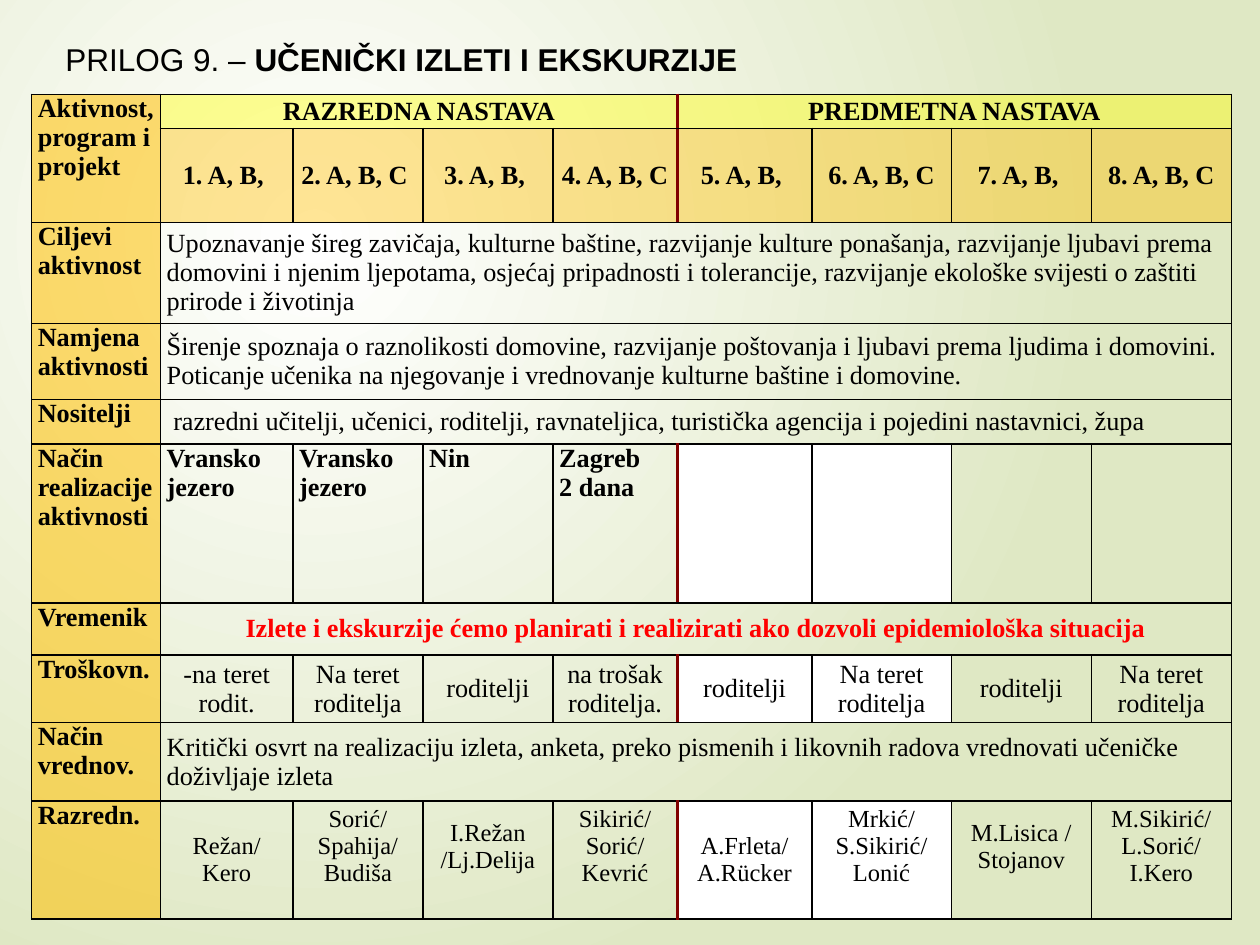
from lxml.etree import SubElement
from pptx import Presentation
from pptx.dml.color import RGBColor
from pptx.enum.text import MSO_ANCHOR as Anchor, MSO_AUTO_SIZE as AutoSize, PP_ALIGN as Align
from pptx.oxml.ns import qn
from pptx.util import Pt

BLACK, WHITE, RED, MAROON = "000000", "FFFFFF", "FF0000", "800000"
AMBER, YELLOW = "FFC000", "FFFF00"
LAST = 8
PRIMARY_LAST = 4
COLUMN_WIDTHS = [73.7, 75.7, 74.3, 74.3, 71.1, 76.9, 79.7, 80, 80]
ROW_HEIGHTS = [19.5, 53.8, 57.6, 43.6, 25.5, 90.8, 29.8, 38.4, 45, 67.4]

ROW_LABELS = {
    0: "Aktivnost, program i projekt",
    2: "Ciljevi aktivnost",
    3: "Namjena aktivnosti",
    4: "Nositelji",
    5: "Način realizacije aktivnosti",
    6: "Vremenik",
    7: "Troškovn.",
    8: "Način vrednov.",
    9: "Razredn.",
}
SHARED_TEXTS = {
    2: "Upoznavanje šireg zavičaja, kulturne baštine, razvijanje kulture ponašanja, "
       "razvijanje ljubavi prema domovini i njenim ljepotama, osjećaj pripadnosti i "
       "tolerancije, razvijanje ekološke svijesti o zaštiti prirode i životinja",
    3: "Širenje spoznaja o raznolikosti domovine, razvijanje poštovanja i ljubavi prema "
       "ljudima i domovini. Poticanje učenika na njegovanje i vrednovanje kulturne "
       "baštine i domovine.",
    4: " razredni učitelji, učenici, roditelji, ravnateljica, turistička agencija i "
       "pojedini nastavnici, župa",
    8: "Kritički osvrt na realizaciju izleta, anketa, preko pismenih i likovnih radova "
       "vrednovati učeničke doživljaje izleta",
}
SCHEDULE = "Izlete i ekskurzije ćemo planirati i realizirati ako dozvoli epidemiološka situacija"
GRADES = ["1. A, B, ", "2. A, B, C ", "3. A, B, ", "4. A, B, C ",
          "5. A, B, ", "6. A, B, C", "7. A, B, ", "8. A, B, C"]
DESTINATIONS = ["Vransko jezero", "Vransko jezero", "Nin", "Zagreb\n2 dana", "", "", "", ""]
COSTS = ["-na teret rodit.", "Na teret roditelja", "roditelji", "na trošak roditelja.",
         "roditelji", "Na teret roditelja", "roditelji", "Na teret roditelja"]
TEACHERS = ["Režan/\vKero", "Sorić/\vSpahija/\vBudiša", "I.Režan\v/Lj.Delija",
            "Sikirić/\vSorić/\vKevrić", "A.Frleta/\vA.Rücker",
            "Mrkić/\vS.Sikirić/\vLonić", "M.Lisica /\vStojanov",
            "M.Sikirić/\vL.Sorić/\vI.Kero"]
RAISED_TEACHERS = {2, 3, 4, 6, 7, 8}


def color(hex_code):
    return RGBColor.from_string(hex_code)


def paint_background(slide):
    fill = slide.background.fill
    fill.gradient()
    for stop, hex_code in zip(fill.gradient_stops, (WHITE, "DFE8C4")):
        stop.color.rgb = color(hex_code)
    gradient = slide.element.find(".//" + qn("a:gradFill"))
    gradient.remove(gradient.find(qn("a:lin")))
    focus = SubElement(gradient, qn("a:path"), path="circle")
    SubElement(focus, qn("a:fillToRect"), l="50000", t="50000", r="100000", b="100000")


def write_title(slide):
    title = slide.shapes.title
    title.left, title.top, title.width, title.height = Pt(25.2), Pt(-3.6), Pt(533), Pt(75)
    frame = title.text_frame
    frame.word_wrap = True
    frame.auto_size = AutoSize.NONE
    frame.vertical_anchor = Anchor.MIDDLE
    frame.margin_left = Pt(12.2)
    heading = frame.paragraphs[0]
    heading.alignment = Align.LEFT
    heading.font.name = "Arial"
    heading.font.size = Pt(18)
    heading.font.color.rgb = color(BLACK)
    heading.add_run().text = "PRILOG 9. – "
    subject = heading.add_run()
    subject.text = "UČENIČKI IZLETI I EKSKURZIJE"
    subject.font.bold = True


def draw_border(cell, side, hex_code, width):
    properties = cell._tc.get_or_add_tcPr()
    border = SubElement(properties, qn("a:ln" + side), w=str(Pt(width)))
    fill = SubElement(border, qn("a:solidFill"))
    SubElement(fill, qn("a:srgbClr"), val=hex_code)


def draw_borders(table):
    for row in range(len(ROW_HEIGHTS)):
        split = row not in SHARED_TEXTS and row != 6
        for column in range(len(COLUMN_WIDTHS)):
            cell = table.cell(row, column)
            ends_primary = column == PRIMARY_LAST or (row, column) == (0, 1)
            divided = {"L": split and column == PRIMARY_LAST + 1, "R": split and ends_primary}
            for side in "LRTB":
                if divided.get(side):
                    draw_border(cell, side, MAROON, 2.25)
                else:
                    draw_border(cell, side, BLACK, 1)
            cell.fill.background()


def tint(cell, hex_code, opacity=100):
    cell.fill.solid()
    cell.fill.fore_color.rgb = color(hex_code)
    if opacity < 100:
        shade = cell._tc.tcPr.find(qn("a:solidFill")).find(qn("a:srgbClr"))
        SubElement(shade, qn("a:alpha"), val=str(opacity * 1000))


def write_cell(cell, text, bold=False, size=15, align=Align.LEFT,
               anchor=Anchor.MIDDLE, hex_code=BLACK):
    cell.margin_left = cell.margin_right = Pt(3.6)
    cell.margin_top = cell.margin_bottom = 0
    cell.vertical_anchor = anchor
    cell.text = text
    for paragraph in cell.text_frame.paragraphs:
        paragraph.alignment = align
        paragraph.font.name = "Times New Roman"
        paragraph.font.size = Pt(size)
        paragraph.font.bold = bold
        paragraph.font.color.rgb = color(hex_code)


def write_grade_row(table, row, texts, **style):
    for column, text in enumerate(texts, 1):
        write_cell(table.cell(row, column), text, **style)


def add_plan_table(slide):
    table = slide.shapes.add_table(
        len(ROW_HEIGHTS), len(COLUMN_WIDTHS), Pt(18), Pt(53.9),
        Pt(sum(COLUMN_WIDTHS)), Pt(sum(ROW_HEIGHTS))).table
    table.first_row = table.horz_banding = False
    for column, width in zip(table.columns, COLUMN_WIDTHS):
        column.width = Pt(width)
    for row, height in zip(table.rows, ROW_HEIGHTS):
        row.height = Pt(height)
    draw_borders(table)

    table.cell(0, 0).merge(table.cell(1, 0))
    table.cell(0, 1).merge(table.cell(0, PRIMARY_LAST))
    table.cell(0, PRIMARY_LAST + 1).merge(table.cell(0, LAST))
    for row in (*SHARED_TEXTS, 6):
        table.cell(row, 1).merge(table.cell(row, LAST))

    for row, label in ROW_LABELS.items():
        write_cell(table.cell(row, 0), label, bold=True, anchor=Anchor.TOP)
        tint(table.cell(row, 0), AMBER, 55)
    for column, stage in ((1, "RAZREDNA NASTAVA"), (PRIMARY_LAST + 1, "PREDMETNA NASTAVA")):
        write_cell(table.cell(0, column), stage, bold=True, align=Align.CENTER)
        tint(table.cell(0, column), YELLOW, 41)
    for row, text in SHARED_TEXTS.items():
        write_cell(table.cell(row, 1), text)
    write_cell(table.cell(6, 1), SCHEDULE, bold=True, align=Align.CENTER, hex_code=RED)

    write_grade_row(table, 1, GRADES, bold=True, align=Align.CENTER)
    write_grade_row(table, 5, DESTINATIONS, bold=True, anchor=Anchor.TOP)
    write_grade_row(table, 7, COSTS, align=Align.CENTER)
    write_grade_row(table, 9, TEACHERS, size=14, align=Align.CENTER)
    for column in range(1, LAST + 1):
        tint(table.cell(1, column), AMBER, 41)
    for column in RAISED_TEACHERS:
        table.cell(9, column).margin_bottom = Pt(15.5)
    for row in (5, 7, 9):
        for column in (5, 6):
            tint(table.cell(row, column), WHITE)


def main():
    presentation = Presentation()
    presentation.slide_width, presentation.slide_height = Pt(720), Pt(540)
    slide = presentation.slides.add_slide(presentation.slide_layouts[5])
    paint_background(slide)
    add_plan_table(slide)
    write_title(slide)
    presentation.save("out.pptx")


if __name__ == "__main__":
    main()
